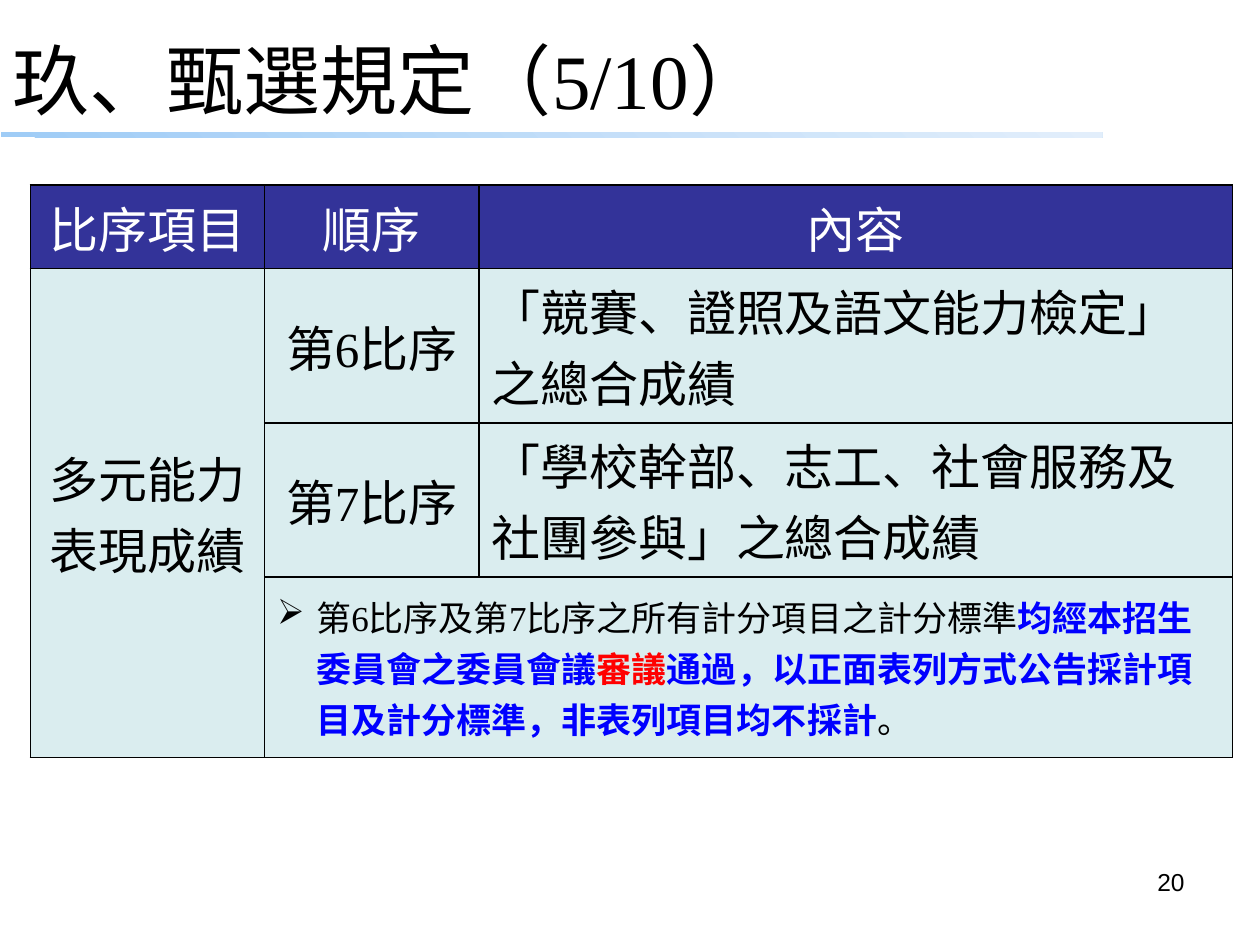
from lxml import etree
from pptx import Presentation
from pptx.dml.color import RGBColor
from pptx.enum.shapes import MSO_SHAPE
from pptx.enum.text import MSO_ANCHOR, MSO_AUTO_SIZE, PP_ALIGN
from pptx.oxml.ns import qn
from pptx.util import Inches, Pt

LEFT, CENTER, RIGHT = PP_ALIGN.LEFT, PP_ALIGN.CENTER, PP_ALIGN.RIGHT
MIDDLE = MSO_ANCHOR.MIDDLE
NO_AUTOFIT = MSO_AUTO_SIZE.NONE

BLACK = RGBColor(0x00, 0x00, 0x00)
WHITE = RGBColor(0xFF, 0xFF, 0xFF)
BLUE = RGBColor(0x00, 0x00, 0xFF)
RED = RGBColor(0xFF, 0x00, 0x00)
HEADER = RGBColor(0x33, 0x33, 0x99)
BODY = RGBColor(0xDA, 0xED, 0xEF)
RULE_START = RGBColor(0x9F, 0xCC, 0xF6)
RULE_END = RGBColor(0xE2, 0xEE, 0xFB)


def add_text(p, text, size=28, color=BLACK, bold=False, font="Times New Roman", align=LEFT):
    p.alignment = align
    r = p.add_run()
    r.text = text
    r.font.name = font
    r.font.size = Pt(size)
    r.font.bold = bold
    r.font.color.rgb = color


def format_cell(cell, color):
    """Give a cell black 1 pt borders, a fill and middle anchoring."""
    tcPr = cell._tc.get_or_add_tcPr()
    for side in ("lnL", "lnR", "lnT", "lnB"):
        ln = etree.SubElement(tcPr, qn(f"a:{side}"), w=str(Pt(1)))
        fill = etree.SubElement(ln, qn("a:solidFill"))
        etree.SubElement(fill, qn("a:srgbClr"), val=str(BLACK))
    cell.fill.solid()
    cell.fill.fore_color.rgb = color
    cell.vertical_anchor = MIDDLE


prs = Presentation()
prs.slide_width, prs.slide_height = Inches(10), Inches(7.5)
s = prs.slides.add_slide(prs.slide_layouts[5])

# Title and the rule below it
title = s.shapes.title
title.left, title.top = Inches(0), Inches(0.28)
title.width, title.height = Inches(9), Inches(0.69)
tf = title.text_frame
tf.auto_size = NO_AUTOFIT
tf.vertical_anchor = MIDDLE
add_text(tf.paragraphs[0], "玖、甄選規定（5/10）", size=44)

rule = s.shapes.add_shape(MSO_SHAPE.RECTANGLE, Inches(0.01), Inches(1.05), Inches(8.74), Inches(0.04))
rule.shadow.inherit = False
rule.line.fill.background()
rule.fill.gradient()
rule.fill.gradient_angle = 45
for stop, color in zip(rule.fill.gradient_stops, (RULE_START, RULE_END)):
    stop.color.rgb = color

# Table
col_widths = (1.86, 1.7, 5.98)
row_heights = (0.57, 1.03, 1.03, 1.43)
table = s.shapes.add_table(len(row_heights), len(col_widths), Inches(0.24), Inches(1.47),
                           Inches(sum(col_widths)), Inches(sum(row_heights))).table
for col, width in zip(table.columns, col_widths):
    col.width = Inches(width)
for row, height in zip(table.rows, row_heights):
    row.height = Inches(height)

rows = [
    ("比序項目", "順序", "內容"),
    ("多元能力表現成績", "第6比序", "「競賽、證照及語文能力檢定」之總合成績"),
    ("", "第7比序", "「學校幹部、志工、社會服務及社團參與」之總合成績"),
    ("", "", ""),
]
for i, texts in enumerate(rows):
    for j, text in enumerate(texts):
        cell = table.cell(i, j)
        format_cell(cell, BODY if i else HEADER)
        if text:
            add_text(cell.text_frame.paragraphs[0], text, color=BLACK if i else WHITE,
                     align=LEFT if i and j == 2 else CENTER)
table.cell(1, 0).merge(table.cell(3, 0))
table.cell(3, 1).merge(table.cell(3, 2))

# Bulleted note in the last row
p = table.cell(3, 1).text_frame.paragraphs[0]
pPr = p._p.get_or_add_pPr()
pPr.set("marL", str(Inches(0.31)))
pPr.set("indent", str(-Inches(0.31)))
etree.SubElement(pPr, qn("a:buChar"), char="➢")
note = [
    ("第6比序及第7比序之所有計分項目之計分標準", BLACK, False),
    ("均經本招生委員會之委員會議", BLUE, True),
    ("審議", RED, True),
    ("通過，以正面表列方式公告採計項目及計分標準，非表列項目均不採計", BLUE, True),
    ("。", BLACK, False),
]
for text, color, bold in note:
    add_text(p, text, size=20, color=color, bold=bold)

# Slide number
number = s.shapes.add_textbox(Inches(7.17), Inches(6.83), Inches(2.33), Inches(0.52))
tf = number.text_frame
tf.word_wrap = True
add_text(tf.paragraphs[0], "20", size=14, font="Arial", align=RIGHT)

# The title runs from the left edge
title.text_frame.paragraphs[0].alignment = LEFT

prs.save("out.pptx")
